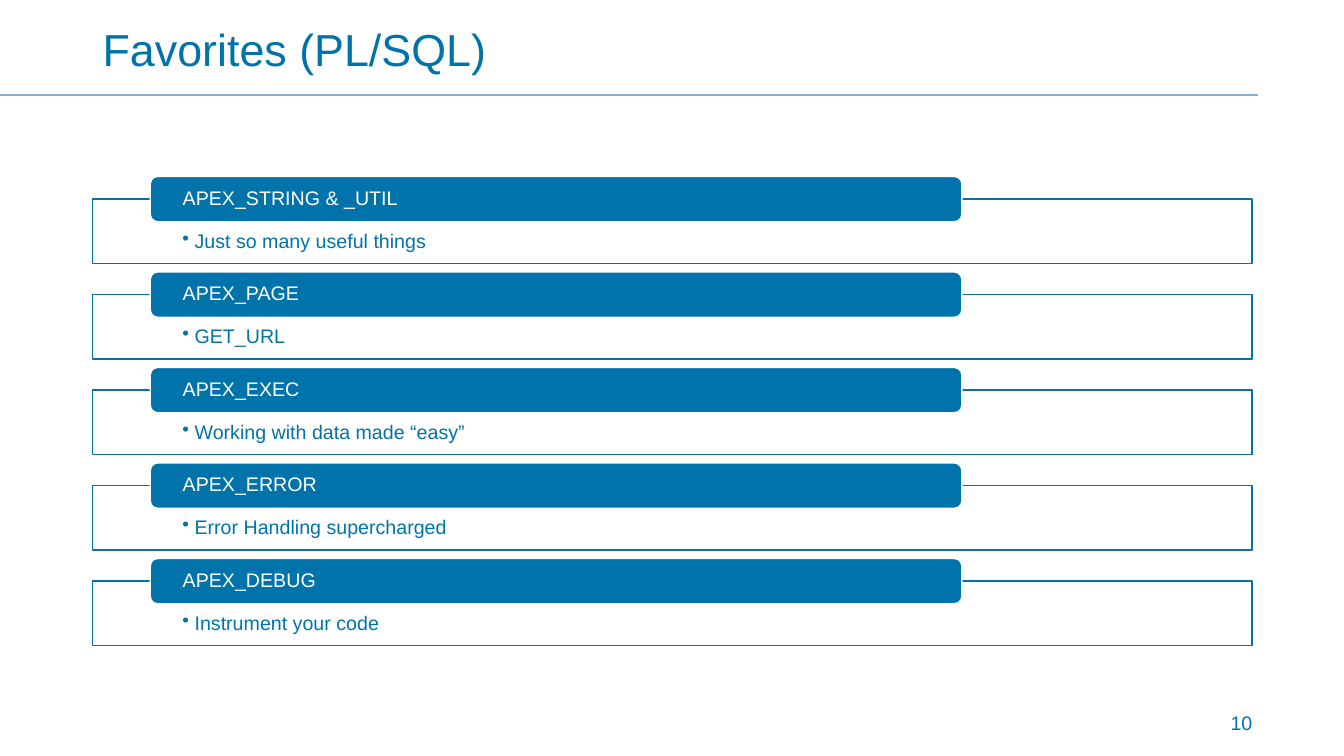
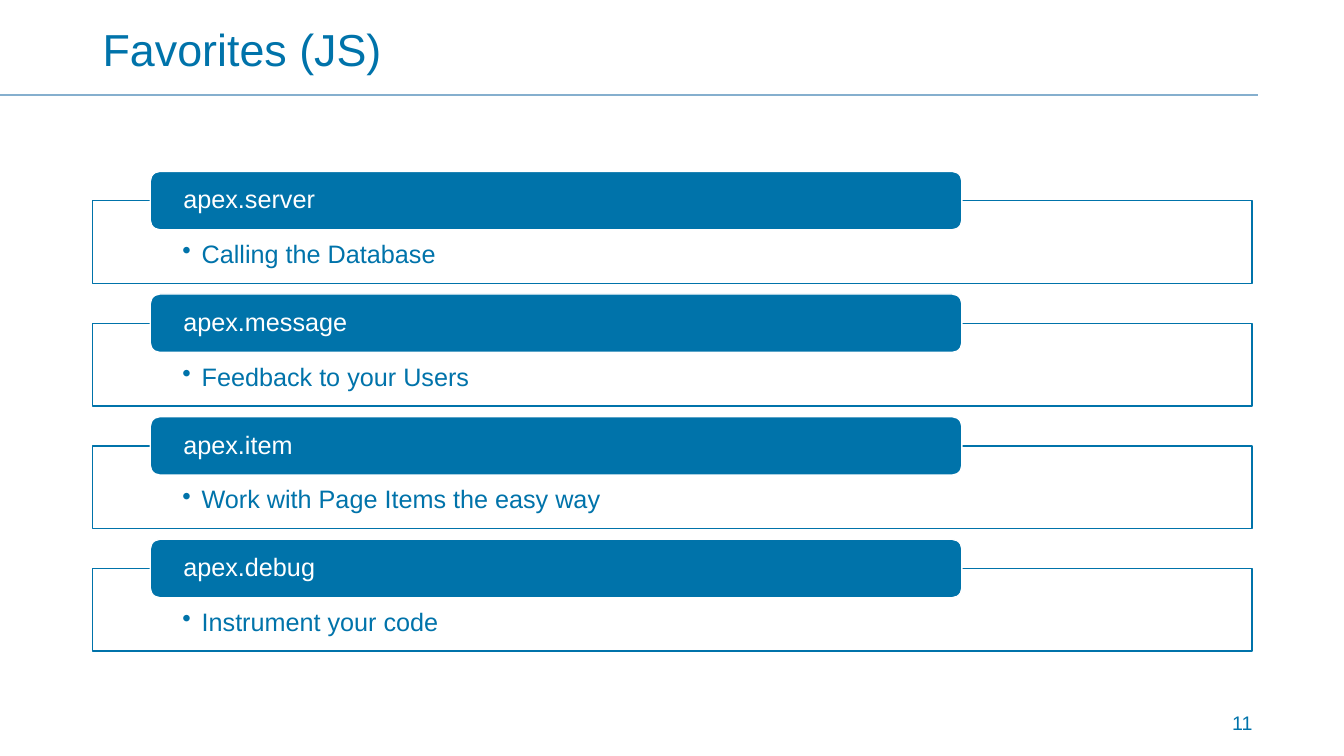
"""Build two slides listing favorite PL/SQL and JavaScript APIs."""
import pptx
import pptx.dml.color
import pptx.enum.shapes
import pptx.enum.text
import pptx.oxml
import pptx.oxml.ns
import pptx.util

Inches = pptx.util.Inches
Pt = pptx.util.Pt
SHAPE = pptx.enum.shapes.MSO_SHAPE
ANCHOR = pptx.enum.text.MSO_ANCHOR
ALIGN = pptx.enum.text.PP_ALIGN

BLUE = pptx.dml.color.RGBColor(0x00, 0x73, 0xAA)
PALE_BLUE = pptx.dml.color.RGBColor(0x85, 0xAF, 0xCE)
WHITE = pptx.dml.color.RGBColor(0xFF, 0xFF, 0xFF)
FONT = "Arial"
LEFT, WIDTH = 0.92, 11.5

SLIDES = [
    {
        "title": "Favorites (PL/SQL)", "number": "10", "size": 14,
        "first_top": 1.75, "last_top": 5.54, "pill_height": 0.45,
        "frame_height": 0.64, "bottom_inset": 0.11, "indent": 0.12,
        "items": [
            ("APEX_STRING & _UTIL", "Just so many useful things"),
            ("APEX_PAGE", "GET_URL"),
            ("APEX_EXEC", "Working with data made “easy”"),
            ("APEX_ERROR", "Error Handling supercharged"),
            ("APEX_DEBUG", "Instrument your code"),
        ],
    },
    {
        "title": "Favorites (JS)", "number": "11", "size": 18,
        "first_top": 1.7, "last_top": 5.35, "pill_height": 0.58,
        "frame_height": 0.82, "bottom_inset": 0.14, "indent": 0.19,
        "items": [
            ("apex.server", "Calling the Database"),
            ("apex.message", "Feedback to your Users"),
            ("apex.item", "Work with Page Items the easy way"),
            ("apex.debug", "Instrument your code"),
        ],
    },
]


def write(shape, text, size, color, anchor=ANCHOR.MIDDLE, align=ALIGN.LEFT, spacing=0.9):
    shape.text_frame.word_wrap = True
    shape.text_frame.vertical_anchor = anchor
    paragraph = shape.text_frame.paragraphs[0]
    paragraph.alignment = align
    paragraph.line_spacing = spacing
    run = paragraph.add_run()
    run.text = text
    run.font.name = FONT
    run.font.size = Pt(size)
    run.font.color.rgb = color
    return paragraph


def add_panel(slide, kind, box, fill, line, insets):
    panel = slide.shapes.add_shape(kind, *map(Inches, box))
    panel.shadow.inherit = False
    panel.fill.solid()
    panel.fill.fore_color.rgb = fill
    panel.line.color.rgb = line
    panel.line.width = Pt(1)
    frame = panel.text_frame
    frame.margin_left, frame.margin_top, frame.margin_right, frame.margin_bottom = map(Inches, insets)
    return panel


deck = pptx.Presentation()
deck.slide_width = Inches(13.33)
deck.slide_height = Inches(7.5)

for content in SLIDES:
    slide = deck.slides.add_slide(deck.slide_layouts[6])

    rule = slide.shapes.add_connector(
        pptx.enum.shapes.MSO_CONNECTOR.STRAIGHT, 0, Inches(0.94), Inches(12.48), Inches(0.94))
    rule.line.color.rgb = PALE_BLUE
    rule.line.width = Pt(1.5)
    rule._element.spPr.append(pptx.oxml.parse_xml(f"<a:effectLst {pptx.oxml.ns.nsdecls('a')}/>"))

    page_number = slide.shapes.add_textbox(Inches(10.54), Inches(7), Inches(1.98), Inches(0.34))
    write(page_number, content["number"], 14, BLUE, ANCHOR.TOP, ALIGN.RIGHT, 1.0)

    title = slide.shapes.add_textbox(Inches(LEFT), Inches(0.15), Inches(WIDTH), Inches(0.74))
    write(title, content["title"], 32, BLUE)

    pitch = (content["last_top"] - content["first_top"]) / (len(content["items"]) - 1)
    half_pill = content["pill_height"] / 2
    for row, (api, benefit) in enumerate(content["items"]):
        pill_top = content["first_top"] + row * pitch

        detail = add_panel(
            slide, SHAPE.RECTANGLE, (LEFT, pill_top + half_pill, WIDTH, content["frame_height"]),
            WHITE, BLUE, (0.89, content["frame_height"] / 2, 0.89, content["bottom_inset"]))
        bullet = write(detail, benefit, content["size"], BLUE, ANCHOR.TOP)
        properties = bullet._p.get_or_add_pPr()
        properties.set("marL", str(Inches(content["indent"])))
        properties.set("indent", str(-Inches(content["indent"])))
        properties.append(pptx.oxml.parse_xml(f'<a:buChar {pptx.oxml.ns.nsdecls("a")} char="•"/>'))

        pill = add_panel(
            slide, SHAPE.ROUNDED_RECTANGLE, (1.49, pill_top, 8.05, content["pill_height"]),
            BLUE, WHITE, (0.3, 0, 0.3, 0))
        write(pill, api, content["size"], WHITE)

deck.save("out.pptx")
